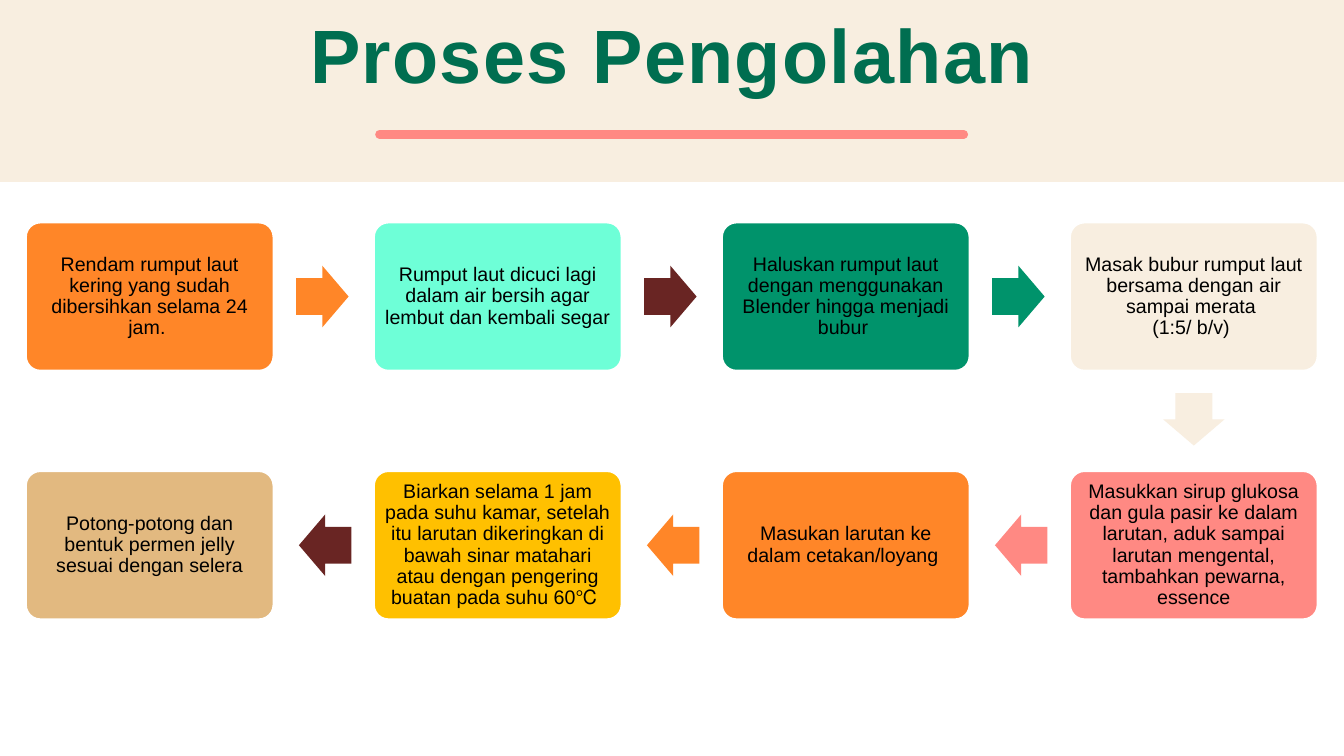
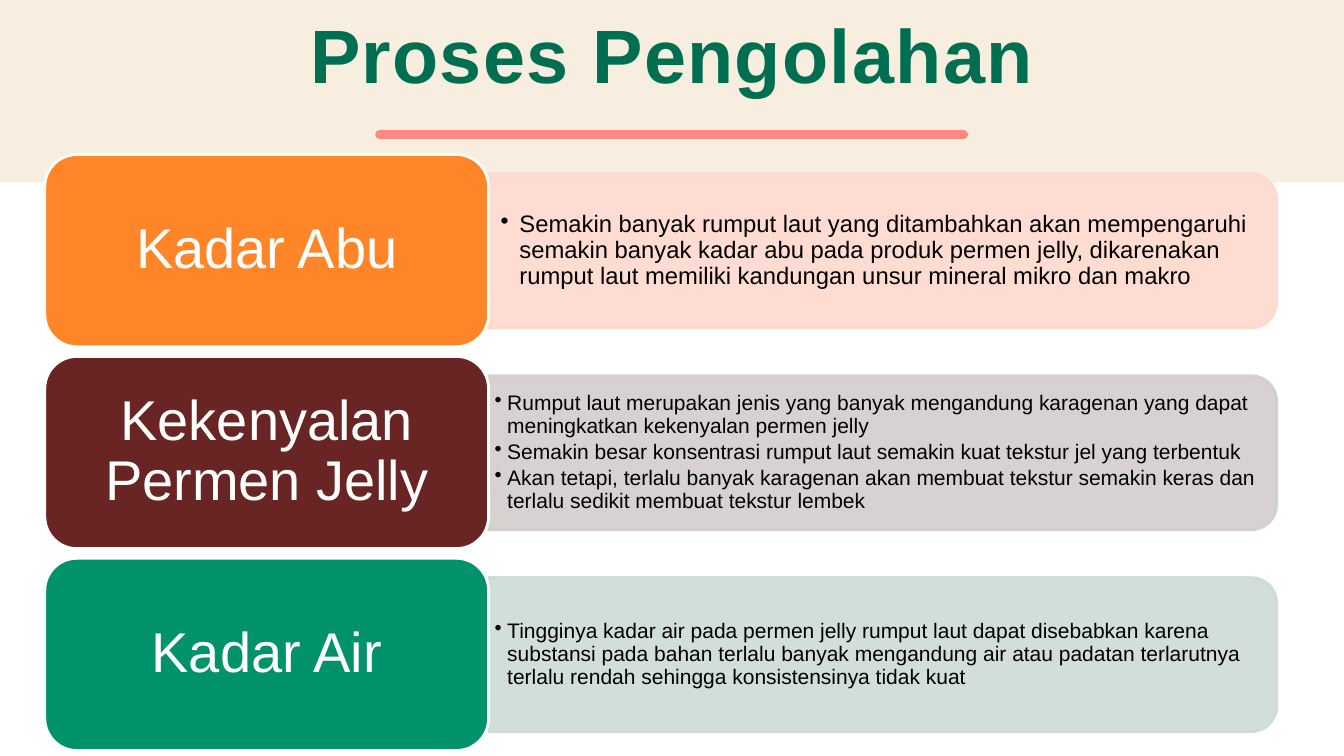
from copy import deepcopy
from dataclasses import dataclass
from typing import Any

from lxml.etree import SubElement as Sub
from pptx import Presentation
from pptx.dml.color import RGBColor as RGB
from pptx.enum.shapes import MSO_CONNECTOR as Conn, MSO_SHAPE as Kind
from pptx.enum.text import MSO_ANCHOR as Anchor, PP_ALIGN as Align
from pptx.oxml.ns import qn
from pptx.util import Pt

# Shared look
HUES = {
    "cream": "F8EEE0", "coral": "FF8983", "pine": "006E50",
    "orange": "FF8628", "mint": "6EFFD7", "green": "00936B",
    "maroon": "692523", "gold": "FFC000", "tan": "E2B980",
    "blush": "FFD9CD", "mist": "D4CDCD", "sage": "CCDCD4",
    "white": "FFFFFF", "black": "000000",
}
WIDE, HIGH = 960, 540
HEAD = {"size": Pt(54), "bold": True}
STEP = {"size": Pt(14)}
LABEL = {"size": Pt(40)}


@dataclass
class Box:
    left: float
    top: float
    wide: float
    high: float

    def args(self) -> list[int]:
        return [Pt(n) for n in (self.left, self.top, self.wide, self.high)]

    def turned(self) -> "Box":
        """Frame that covers this box after a quarter turn."""
        shift = (self.wide - self.high) / 2
        return Box(self.left + shift, self.top - shift, self.high, self.wide)


@dataclass
class Step:
    text: str
    hue: str
    arrow: str = ""


@dataclass
class Topic:
    name: str
    hue: str
    tint: str
    size: float
    dent: float
    pad: tuple[float, float]
    notes: list[str]


STEPS = [
    Step("Rendam rumput laut kering yang sudah dibersihkan selama 24 jam. ",
         "orange", "orange"),
    Step("Rumput laut dicuci lagi dalam air bersih agar lembut dan kembali "
         "segar", "mint", "maroon"),
    Step("Haluskan rumput laut dengan menggunakan Blender hingga menjadi "
         "bubur ", "green", "green"),
    Step("Masak bubur rumput laut bersama dengan air sampai merata \n"
         "(1:5/ b/v) ", "cream", "cream"),
    Step("Masukkan sirup glukosa dan gula pasir ke dalam larutan, aduk sampai "
         "larutan mengental, tambahkan pewarna, essence", "coral", "coral"),
    Step("Masukan larutan ke dalam cetakan/loyang ", "orange", "orange"),
    Step("Biarkan selama 1 jam pada suhu kamar, setelah itu larutan "
         "dikeringkan di bawah sinar matahari atau dengan pengering buatan "
         "pada suhu 60℃ ", "gold", "maroon"),
    Step("Potong-potong dan bentuk permen jelly sesuai dengan selera", "tan"),
]

TOPICS = [
    Topic("Kadar Abu", "orange", "blush", 17, 13.5, (8.5, 4.3), [
        "Semakin banyak rumput laut yang ditambahkan akan mempengaruhi "
        "semakin banyak kadar abu pada produk permen jelly, dikarenakan "
        "rumput laut memiliki kandungan unsur mineral mikro dan makro"]),
    Topic("Kekenyalan Permen Jelly", "maroon", "mist", 15, 9, (4.3, 2.2), [
        "Rumput laut merupakan jenis yang banyak mengandung karagenan yang "
        "dapat meningkatkan kekenyalan permen jelly",
        "Semakin besar konsentrasi rumput laut semakin kuat tekstur jel yang "
        "terbentuk",
        "Akan tetapi, terlalu banyak karagenan akan membuat tekstur semakin "
        "keras dan terlalu sedikit membuat tekstur lembek"]),
    Topic("Kadar Air", "green", "sage", 15, 9, (4.3, 2.2), [
        "Tingginya kadar air pada permen jelly rumput laut dapat disebabkan "
        "karena substansi pada bahan terlalu banyak mengandung air atau "
        "padatan terlarutnya terlalu rendah sehingga konsistensinya tidak "
        "kuat"]),
]


def paint(hue: str) -> RGB:
    return RGB.from_string(HUES[hue])


def shape(slide: Any, kind: Any, box: Box, hue: str, edge: str = "",
          turn: float = 0, bends: tuple[float, ...] = ()) -> Any:
    item = slide.shapes.add_shape(kind, *box.args())
    item.shadow.inherit = False
    item.rotation = turn
    item.fill.solid()
    item.fill.fore_color.rgb = paint(hue)
    if edge:
        item.line.color.rgb = paint(edge)
        item.line.width = Pt(2)
    else:
        item.line.fill.background()
    for i, bend in enumerate(bends):
        item.adjustments[i] = bend
    return item


def write(item: Any, texts: list[str], form: dict[str, Any], hue: str,
          pad: tuple[float, float], gap: float = 0.9,
          dent: float = 0) -> None:
    """Fill a shape with centred text, or with bullets if dent is set."""
    frame = item.text_frame
    across, down = Pt(pad[0]), Pt(pad[1])
    setup = {"word_wrap": True, "vertical_anchor": Anchor.MIDDLE,
             "margin_left": across, "margin_right": across,
             "margin_top": down, "margin_bottom": down}
    for key, value in setup.items():
        setattr(frame, key, value)
    for i, text in enumerate(texts):
        para = frame.add_paragraph() if i else frame.paragraphs[0]
        para.text = text
        if dent:
            props = para._p.get_or_add_pPr()
            props.set("marL", str(Pt(dent)))
            props.set("indent", str(-Pt(dent)))
            Sub(props, qn("a:buChar")).set("char", "•")
            para.space_after = Pt(2.3)
        para.alignment = Align.LEFT if dent else Align.CENTER
        para.line_spacing = gap
        for run in para.runs:
            for key, value in {"name": "Arial", **form}.items():
                setattr(run.font, key, value)
            run.font.color.rgb = paint(hue)
        # Line breaks take the size of the text
        for stop in para._p.findall(qn("a:br")):
            stop.insert(0, deepcopy(para._p.find(".//" + qn("a:rPr"))))


def start(deck: Any, title: str) -> Any:
    """Add a slide with the band, the rule and the title."""
    slide = deck.slides.add_slide(deck.slide_layouts[6])
    shape(slide, Kind.RECTANGLE, Box(0, 0, WIDE, 130), "cream")
    rule = slide.shapes.add_connector(
        Conn.STRAIGHT, Pt(271), Pt(96), Pt(688.5), Pt(96))
    rule.line.color.rgb = paint("coral")
    rule.line.width = Pt(6)
    rule.line._get_or_add_ln().set("cap", "rnd")
    Sub(rule.element.spPr, qn("a:effectLst"))
    head = slide.shapes.add_textbox(*Box(48, 5.8, 864, 74).args())
    write(head, [title], HEAD, "pine", (9.4, 5), 0.85)
    for props in head.element.iter(qn("a:rPr")):
        props.set("spc", "100")
    return slide


def flow(slide: Any) -> None:
    """Draw the steps: to the right, down, then back to the left."""
    cols, left, top = 4, 18.2, 158.6
    wide, high, pitch, drop = 177.5, 106.5, 248.6, 177.6
    long, thick = 37.5, 44
    for i, step in enumerate(STEPS):
        row, spot = divmod(i, cols)
        col = cols - 1 - spot if row else spot
        x, y = left + col * pitch, top + row * drop
        item = shape(slide, Kind.ROUNDED_RECTANGLE, Box(x, y, wide, high),
                     step.hue, "white", bends=(0.1,))
        write(item, [step.text], STEP, "black", (4.2, 4.2))
        if not step.arrow:
            continue
        ax, ay = x + wide + 15.8, y + (high - thick) / 2
        turn = 0
        if row:
            ax, turn = x - 15.8 - long, 180
        elif spot == cols - 1:
            ax, turn = x + (wide - long) / 2, 90
            ay = y + high + 12.4
        shape(slide, Kind.RIGHT_ARROW, Box(ax, ay, long, thick),
              step.arrow, turn=turn, bends=(0.6, 0.5))


def topics(slide: Any) -> None:
    """Draw one label and one panel of notes for each topic."""
    left, top, wide, high, pitch = 32, 110.4, 317, 137.3, 144.2
    for i, topic in enumerate(TOPICS):
        y = top + i * pitch
        edge = left + wide
        panel = shape(slide, Kind.ROUND_2_SAME_RECTANGLE,
                      Box(edge, y + 13.8, 563, 110).turned(),
                      topic.tint, topic.tint, 90)
        for tone in panel.element.spPr.iter(qn("a:srgbClr")):
            Sub(tone, qn("a:alpha")).set("val", "90000")
        notes = slide.shapes.add_textbox(
            *Box(edge, y + 19, 558, 99.5).args())
        write(notes, topic.notes, {"size": Pt(topic.size)}, "black",
              topic.pad, dent=topic.dent)
        label = shape(slide, Kind.ROUNDED_RECTANGLE,
                      Box(left, y, wide, high), topic.hue, "white")
        write(label, [topic.name], LABEL, "white", (12, 6))


def main() -> None:
    deck = Presentation()
    deck.slide_width, deck.slide_height = Pt(WIDE), Pt(HIGH)
    for draw in (flow, topics):
        draw(start(deck, "Proses Pengolahan"))
    deck.save("out.pptx")


if __name__ == "__main__":
    main()
